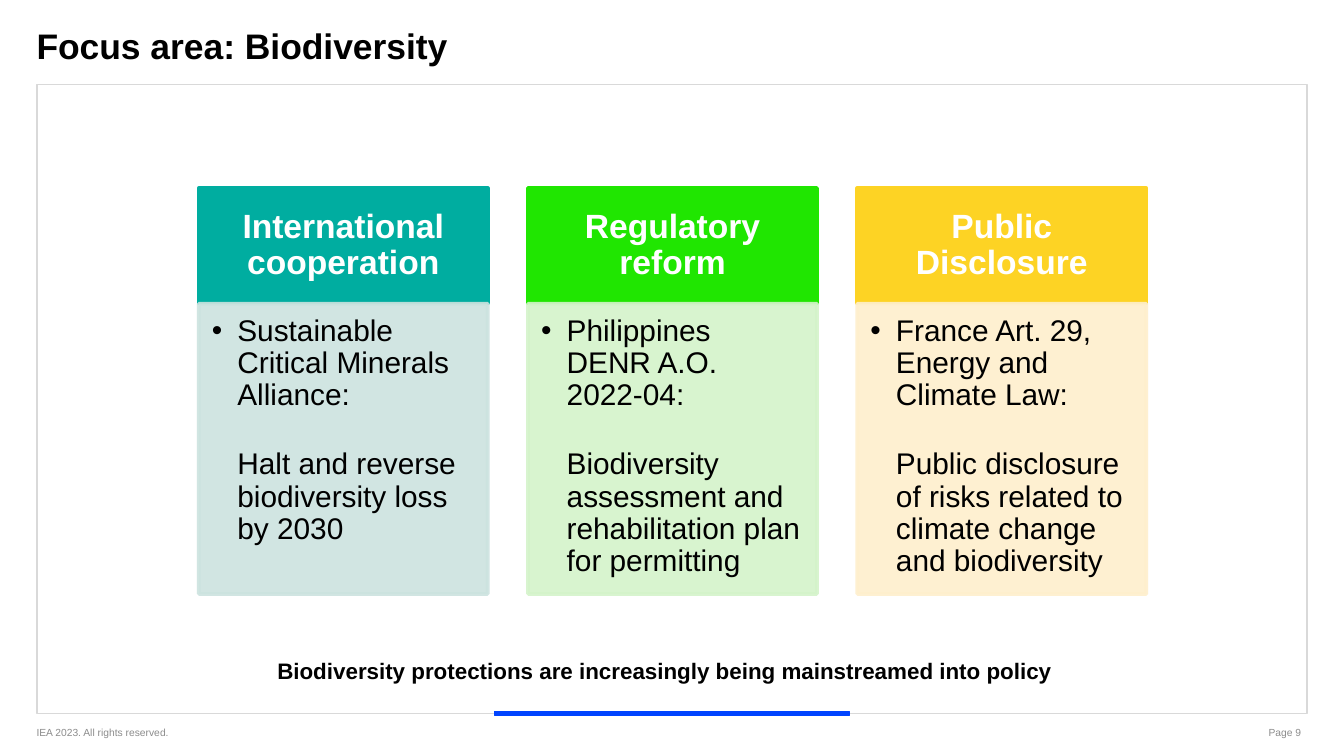
"""Build the biodiversity focus-area slide with three policy columns."""
from lxml.etree import SubElement
from pptx import Presentation
from pptx.dml.color import RGBColor
from pptx.enum.shapes import MSO_SHAPE
from pptx.enum.text import MSO_ANCHOR, PP_ALIGN
from pptx.oxml.ns import qn
from pptx.util import Pt

COLUMNS = [
    ("International cooperation", "00ADA0", "CCE3DF",
     "Sustainable Critical Minerals Alliance:",
     "Halt and reverse biodiversity loss by 2030"),
    ("Regulatory reform", "20E601", "D4F3CA",
     "Philippines DENR A.O. 2022-04:",
     "Biodiversity assessment and rehabilitation plan for permitting"),
    ("Public Disclosure", "FDD324", "FEEFCD",
     "France Art. 29, Energy and Climate Law:",
     "Public disclosure of risks related to climate change and biodiversity"),
]
COLUMN_LEFT, COLUMN_STEP, COLUMN_WIDTH = 106.5, 176.4, 154.8
HEADER_TOP, HEADER_HEIGHT, BODY_HEIGHT = 100.8, 61.9, 155.5
INDENT = 13.7


def paint(color_format, value):
    """Set a colour from a hex string."""
    color_format.rgb = RGBColor.from_string(value)


def add_panel(page, left, top, width, height, fill, line, weight):
    """Add a rectangle, unfilled when fill is None."""
    panel = page.shapes.add_shape(
        MSO_SHAPE.RECTANGLE, Pt(left), Pt(top), Pt(width), Pt(height))
    panel.shadow.inherit = False
    if fill:
        panel.fill.solid()
        paint(panel.fill.fore_color, fill)
    else:
        panel.fill.background()
    paint(panel.line.color, line)
    panel.line.width = Pt(weight)
    return panel


def set_opacity(panel, percent):
    """Make the fill and the line of a panel partly transparent."""
    for color in panel.element.spPr.iter(qn("a:srgbClr")):
        SubElement(color, qn("a:alpha"), val=str(percent * 1000))


def set_frame(frame, insets, anchor):
    """Set wrapping, insets (left, top, right, bottom) and anchor."""
    frame.word_wrap = True
    frame.vertical_anchor = anchor
    (frame.margin_left, frame.margin_top,
     frame.margin_right, frame.margin_bottom) = map(Pt, insets)


def style_paragraph(paragraph, text, size, color="000000", bold=False,
                    align=PP_ALIGN.LEFT):
    """Fill a paragraph and set its font and alignment."""
    paragraph.text = text
    paragraph.alignment = align
    font = paragraph.font
    font.name, font.size, font.bold = "Arial", Pt(size), bold
    paint(font.color, color)


def add_label(page, place, text, size, insets, anchor=MSO_ANCHOR.MIDDLE, **style):
    """Add a one-paragraph text box."""
    box = page.shapes.add_textbox(*map(Pt, place))
    set_frame(box.text_frame, insets, anchor)
    style_paragraph(box.text_frame.paragraphs[0], text, size, **style)


def indent_paragraph(paragraph, bullet):
    """Give a paragraph a hanging indent, with a bullet if wanted."""
    properties = paragraph._p.get_or_add_pPr()
    properties.set("marL", str(Pt(INDENT)))
    properties.set("indent", str(Pt(-INDENT if bullet else 0)))
    if bullet:
        SubElement(properties, qn("a:buFont"), typeface="Arial")
        SubElement(properties, qn("a:buChar"), char="•")
    else:
        SubElement(properties, qn("a:buNone"))


def add_column(page, left, heading, strong, pale, measure, aim):
    """Add a coloured header with its measure and aim below."""
    header = add_panel(page, left, HEADER_TOP, COLUMN_WIDTH, HEADER_HEIGHT,
                       strong, strong, 2)
    set_frame(header.text_frame, (10, 5.8, 10, 5.8), MSO_ANCHOR.MIDDLE)
    title = header.text_frame.paragraphs[0]
    style_paragraph(title, heading, 18, "FFFFFF", True, PP_ALIGN.CENTER)
    title.line_spacing = 0.9

    body = add_panel(page, left, HEADER_TOP + HEADER_HEIGHT, COLUMN_WIDTH,
                     BODY_HEIGHT, pale, pale, 2)
    set_opacity(body, 90)
    frame = body.text_frame
    set_frame(frame, (7, 6.5, 8.5, 10), MSO_ANCHOR.TOP)
    first, second = frame.paragraphs[0], frame.add_paragraph()
    for paragraph, text in ((first, measure), (second, aim)):
        indent_paragraph(paragraph, bullet=paragraph is first)
        style_paragraph(paragraph, text, 16)
        paragraph.line_spacing = 0.9
    second.space_before = Pt(19.7)


def main():
    """Build and save the slide."""
    deck = Presentation()
    deck.slide_width, deck.slide_height = Pt(720), Pt(405)
    page = deck.slides.add_slide(deck.slide_layouts[6])

    footer = {"size": 5.5, "insets": (0, 3.6, 7.2, 3.6), "color": "8C8C8C"}
    add_label(page, (19.6, 385.2, 95.8, 14.4),
              "IEA 2023. All rights reserved.", **footer)
    add_label(page, (608.4, 385.2, 95.8, 14.4), "Page 9",
              align=PP_ALIGN.RIGHT, **footer)
    add_panel(page, 19.8, 45.4, 680.4, 337, None, "D9D9D9", 0.75)
    add_panel(page, 265, 381.2, 190, 2, "0044FF", "0044FF", 0.5)
    add_label(page, (19.6, 13, 629.3, 31), "Focus area: Biodiversity", 19,
              (0, 0, 0, 0), MSO_ANCHOR.TOP, bold=True)
    add_label(page, (19.6, 344.9, 680.4, 34.6),
              "Biodiversity protections are increasingly being mainstreamed into policy",
              12, (0, 0, 7.2, 5.8), bold=True, align=PP_ALIGN.CENTER)
    for index, column in enumerate(COLUMNS):
        add_column(page, COLUMN_LEFT + index * COLUMN_STEP, *column)
    deck.save("out.pptx")


if __name__ == "__main__":
    main()
